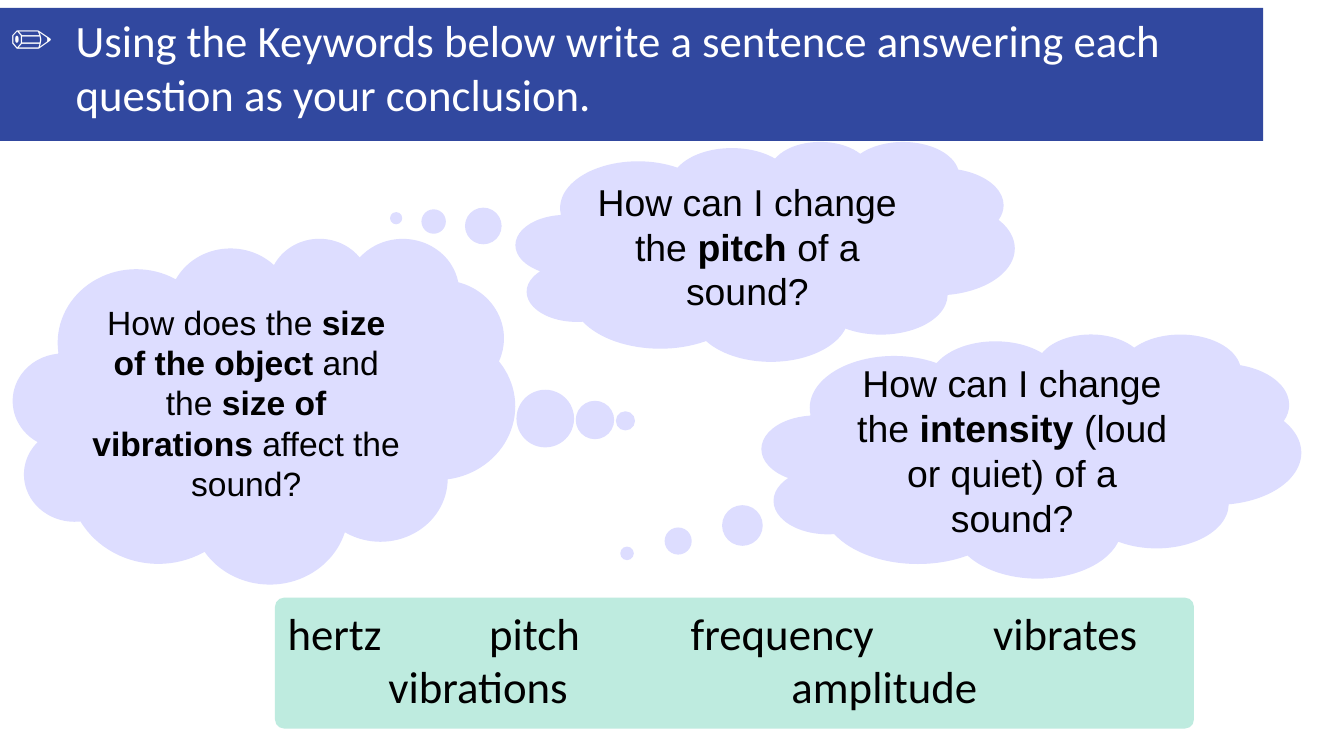
from dataclasses import dataclass

from lxml.etree import SubElement
from pptx import Presentation
from pptx.dml.color import RGBColor as Rgb
from pptx.enum.shapes import MSO_SHAPE as Kind
from pptx.enum.text import MSO_ANCHOR as Anchor, MSO_AUTO_SIZE as Fit, PP_ALIGN as Align
from pptx.oxml.ns import qn
from pptx.util import Cm, Pt


@dataclass(frozen=True)
class Theme:
    navy: str = "31489F"
    lilac: str = "DDDDFF"
    mint: str = "BEEBDF"
    white: str = "FFFFFF"
    black: str = "000000"
    head: str = "Calibri"
    body: str = "Arial"
    large: float = 32
    medium: float = 26.7
    small: float = 24


THEME = Theme()


def paint(shape, color):
    shape.fill.solid()
    shape.fill.fore_color.rgb = Rgb.from_string(color)
    shape.line.fill.background()


def write(shape, lines, font=THEME.head, size=THEME.large, color=THEME.black,
          align=Align.LEFT, anchor=Anchor.TOP):
    """Fill a shape with lines; the parts between asterisks turn bold."""
    frame = shape.text_frame
    frame.word_wrap = True
    frame.auto_size = Fit.NONE
    frame.vertical_anchor = anchor
    for i, line in enumerate(lines):
        para = frame.add_paragraph() if i else frame.paragraphs[0]
        para.alignment = align
        for j, part in enumerate(line.split("*")):
            run = para.add_run()
            run.text = part
            run.font.name, run.font.size = font, Pt(size)
            run.font.bold = j % 2 == 1
            run.font.color.rgb = Rgb.from_string(color)
    return frame.paragraphs


def add_bullet(para, char, indent):
    props = para._p.get_or_add_pPr()
    props.set("marL", str(indent))
    props.set("indent", str(-indent))
    SubElement(props, qn("a:buFont"), typeface="Arial")
    SubElement(props, qn("a:buChar"), char=char)


def add_tabs(para, step, count):
    stops = SubElement(para._p.get_or_add_pPr(), qn("a:tabLst"))
    for i in range(1, count + 1):
        SubElement(stops, qn("a:tab"), pos=str(step * i), algn="l")


def add_shape(slide, kind, box, color, adjust):
    shape = slide.shapes.add_shape(kind, *map(Cm, box))
    shape.shadow.inherit = False
    paint(shape, color)
    for i, value in enumerate(adjust):
        shape.adjustments[i] = value
    return shape


def add_cloud(slide, text, box, tail, size=THEME.medium):
    cloud = add_shape(slide, Kind.CLOUD_CALLOUT, box, THEME.lilac, tail)
    write(cloud, [text], font=THEME.body, size=size,
          align=Align.CENTER, anchor=Anchor.MIDDLE)


def add_title(slide, text):
    title = slide.shapes.title
    title.left, title.top, title.width, title.height = map(Cm, (0, 0.2, 31.83, 3.35))
    paint(title, THEME.navy)
    para, = write(title, [text], color=THEME.white)
    add_bullet(para, "✏", Cm(1.65))


def add_words(slide, lines):
    panel = add_shape(slide, Kind.ROUNDED_RECTANGLE, (6.93, 15.06, 23.16, 3.3),
                      THEME.mint, [0.07])
    for para in write(panel, lines):
        add_tabs(para, Cm(2.54), 7)


def main():
    deck = Presentation()
    deck.slide_width, deck.slide_height = Cm(33.87), Cm(19.05)
    slide = deck.slides.add_slide(deck.slide_layouts[5])
    add_title(slide, "Using the Keywords below write a sentence answering each "
                     "question as your conclusion.")
    add_cloud(slide, "How can I change the *pitch* of a sound?",
              (13, 3.56, 12.57, 5.54), (-0.74, -0.15))
    add_cloud(slide, "How can I change the *intensity* (loud or quiet) of a sound?",
              (19.2, 8.41, 13.59, 6.15), (-0.75, 0.4))
    add_cloud(slide, "How does the *size of the object *and the "
                     "*size of vibrations *affect the sound?",
              (0.33, 5.99, 12.65, 8.71), (0.72, 0.03), size=THEME.small)
    add_words(slide, ["hertz\t\tpitch\t\tfrequency\t\tvibrates",
                      "\tvibrations\t\t\tamplitude"])
    deck.save("out.pptx")


if __name__ == "__main__":
    main()
